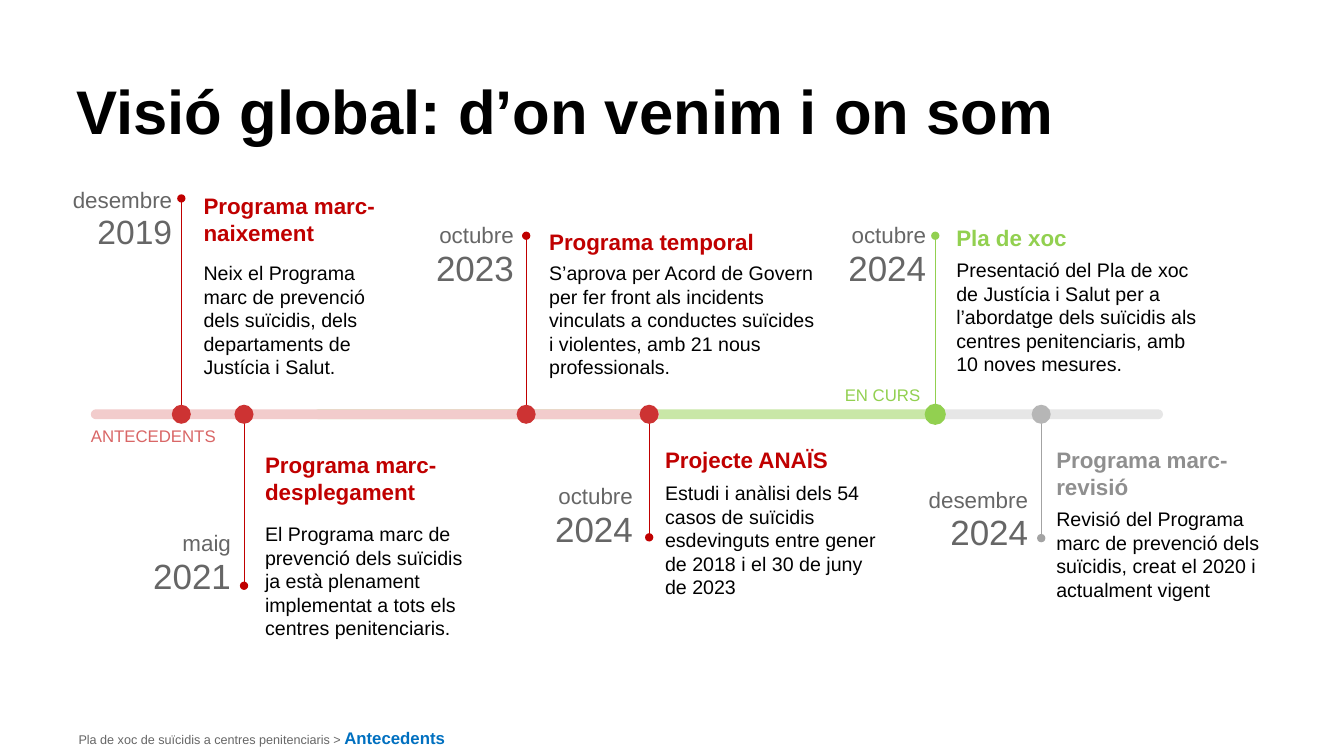
import pptx
import pptx.util
import pptx.dml.color
import pptx.enum.shapes
import pptx.enum.text
import pptx.oxml.ns
from dataclasses import dataclass
from lxml import etree

Cm = pptx.util.Cm
Pt = pptx.util.Pt
ALIGN = pptx.enum.text.PP_ALIGN
SHAPES = pptx.enum.shapes.MSO_SHAPE

FONT = "Arial"
AXIS = 10.44  # height of the timeline's centre line, in cm
BAR_HEIGHT = 0.25
DOT = 0.48

COLORS = {
    "black": "000000", "text": "666666", "blue": "0070C0",
    "red": "C00000", "red_dot": "CD3333", "red_bar": "F2CCCC", "red_label": "D96666",
    "green": "92D050", "green_bar": "C9E7A7",
    "gray_heading": "8F8F8F", "gray_stem": "A3A3A3", "gray_dot": "B6B6B6", "gray_bar": "E6E6E6",
}

# Heading, stem and dot colours of each kind of milestone
THEMES = {
    "past": ("red", "red", "red_dot"),
    "current": ("green", "green", "green"),
    "future": ("gray_heading", "gray_stem", "gray_dot"),
}


@dataclass
class Box:
    left: float
    top: float
    width: float
    height: float

    def lengths(self):
        return Cm(self.left), Cm(self.top), Cm(self.width), Cm(self.height)


@dataclass
class Milestone:
    box: Box            # column with heading and description
    theme: str
    stem_gap: float     # from the stem to the column
    tip: float          # stem tip, below the column's top
    date_gap: float     # from the date to the stem
    date_top: float     # date, below the column's top
    date_width: float
    body_top: float     # description, below the column's top
    month: str
    year: str
    heading: str
    body: str
    year_size: int = 25


MILESTONES = [
    Milestone(Box(5.13, 4.85, 4.42, 4.7), "past", 0.56, 0.15, 0.23, -0.33, 2.67, 1.73,
              "desembre", "2019", "Programa marc- naixement",
              "Neix el Programa marc de prevenció dels suïcidis, dels departaments "
              "de Justícia i Salut.", 24),
    Milestone(Box(6.68, 11.38, 5.41, 4.75), "past", 0.53, 3.38, 0.33, 1.75, 2.36, 1.78,
              "maig", "2021", "Programa marc- desplegament",
              "El Programa marc de prevenció dels suïcidis ja està plenament "
              "implementat a tots els centres penitenciaris."),
    Milestone(Box(13.84, 5.74, 6.83, 3.81), "past", 0.58, 0.2, 0.31, -0.36, 2.36, 0.84,
              "octubre", "2023", "Programa temporal",
              "S’aprova per Acord de Govern per fer front als incidents vinculats a "
              "conductes suïcides i violentes, amb 21 nous professionals."),
    Milestone(Box(16.76, 11.25, 5.41, 2.67), "past", 0.4, 2.29, 0.41, 0.71, 2.31, 0.87,
              "octubre", "2024", "Projecte ANAÏS",
              "Estudi i anàlisi dels 54 casos de suïcidis esdevinguts entre gener "
              "de 2018 i el 30 de juny de 2023"),
    Milestone(Box(24.1, 5.66, 6.2, 3.81), "current", 0.53, 0.28, 0.23, -0.28, 2.31, 0.84,
              "octubre", "2024", "Pla de xoc",
              "Presentació del Pla de xoc de Justícia i Salut per a l’abordatge dels "
              "suïcidis als centres penitenciaris, amb 10 noves mesures."),
    Milestone(Box(26.62, 11.25, 5.41, 4.5), "future", 0.38, 2.31, 0.33, 0.79, 2.64, 1.53,
              "desembre", "2024", "Programa marc- revisió",
              "Revisió del Programa marc de prevenció dels suïcidis, creat el 2020 i "
              "actualment vigent"),
]


def rgb(name):
    return pptx.dml.color.RGBColor.from_string(COLORS[name])


def write(frame, spans, align=ALIGN.LEFT, spacing=1.0, before=10):
    """Fill a text frame; each span is (text, size, colour, bold)."""
    frame.word_wrap = True
    frame.auto_size = pptx.enum.text.MSO_AUTO_SIZE.NONE
    frame.vertical_anchor = pptx.enum.text.MSO_ANCHOR.TOP
    frame.margin_left = frame.margin_top = frame.margin_right = frame.margin_bottom = 0
    para = frame.paragraphs[0]
    para.alignment = align
    para.line_spacing = spacing
    para.space_before = Pt(before)
    for text, size, color, bold in spans:
        span = para.add_run()
        span.text = text
        span.font.name = FONT
        span.font.size = Pt(size)
        span.font.bold = bold
        span.font.color.rgb = rgb(color)


def add_text(page, box, spans, **style):
    write(page.shapes.add_textbox(*box.lengths()).text_frame, spans, **style)


def add_solid(page, kind, box, color):
    shape = page.shapes.add_shape(kind, *box.lengths())
    shape.shadow.inherit = False
    shape.fill.solid()
    shape.fill.fore_color.rgb = rgb(color)
    shape.line.fill.background()
    return shape


def add_stem(page, x, tip, color):
    """Vertical line from its round tip to the axis."""
    stem = page.shapes.add_connector(
        pptx.enum.shapes.MSO_CONNECTOR.STRAIGHT, Cm(x), Cm(tip), Cm(x), Cm(AXIS))
    stem.line.width = Pt(0.75)
    stem.line.color.rgb = rgb(color)
    qn = pptx.oxml.ns.qn
    etree.SubElement(stem.line._get_or_add_ln(), qn("a:headEnd"), type="oval")
    etree.SubElement(stem._element.spPr, qn("a:effectLst"))


def add_title(page, box):
    title = page.shapes.title
    title.left, title.top, title.width, title.height = box.lengths()
    write(title.text_frame, [("Visió global: d’on venim i on som", 44, "black", True)], before=0)


def add_axis(page, box):
    """Overlapping phase bars and their labels."""
    for start, width, color in ((21.03, 5.99, "gray_bar"), (5.61, 15.75, "green_bar"),
                                (0, 14.33, "red_bar")):
        bar = add_solid(page, SHAPES.ROUNDED_RECTANGLE,
                        Box(box.left + start, box.top, width, box.height), color)
        bar.adjustments[0] = 0.5
    for text, start, drop, width, color in (("ANTECEDENTS", 0, 0.48, 3.43, "red_label"),
                                            ("EN CURS", 19, -0.56, 2.36, "green")):
        add_text(page, Box(box.left + start, box.top + drop, width, 0.35),
                 [(text, 12, color, False)], spacing=0.9)


def add_milestone(page, item):
    box = item.box
    heading_color, stem_color, dot_color = THEMES[item.theme]
    x = box.left - item.stem_gap

    # Stem and dot
    add_stem(page, x, box.top + item.tip, stem_color)
    dot = add_solid(page, SHAPES.OVAL, Box(x - DOT / 2, AXIS - DOT / 2, DOT, DOT), dot_color)
    if item.theme == "current":
        dot.line.color.rgb = rgb(dot_color)
        dot.line.width = Pt(1.5)

    # Date
    add_text(page, Box(x - item.date_gap - item.date_width, box.top + item.date_top,
                       item.date_width, 0.81),
             [(item.month, 16, "text", False), (" " + item.year, item.year_size, "text", False)],
             align=ALIGN.RIGHT, spacing=0.9)

    # Heading and description
    add_text(page, Box(box.left, box.top, 5.41, 0.48), [(item.heading, 16, heading_color, True)])
    add_text(page, Box(box.left, box.top + item.body_top, box.width, box.height - item.body_top),
             [(item.body, 14, "black", False)])


def add_footer(page, box):
    add_text(page, box, [("Pla de xoc de suïcidis a centres penitenciaris > ", 9, "text", False),
                         ("Antecedents", 12, "blue", True)], spacing=0.9)


def main():
    deck = pptx.Presentation()
    deck.slide_width, deck.slide_height = Cm(33.87), Cm(19.05)
    page = deck.slides.add_slide(deck.slide_layouts[5])
    add_title(page, Box(1.93, 1.83, 29.9, 1.19))
    add_axis(page, Box(2.29, AXIS - BAR_HEIGHT / 2, 27.02, BAR_HEIGHT))
    for item in MILESTONES:
        add_milestone(page, item)
    add_footer(page, Box(1.98, 18.39, 13.44, 0.33))
    deck.save("out.pptx")


if __name__ == "__main__":
    main()
